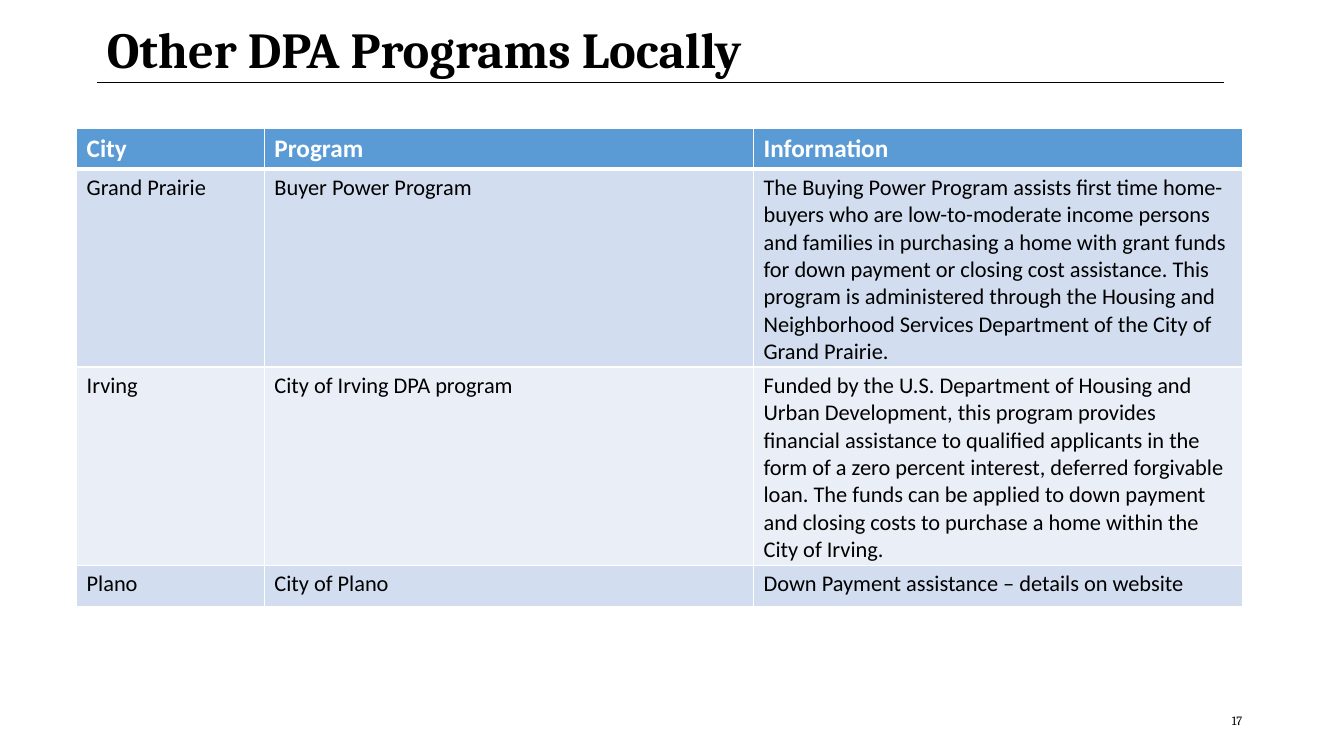
import dataclasses

import lxml.etree
import pptx
import pptx.dml.color
import pptx.enum.shapes
import pptx.enum.text
import pptx.oxml.ns
import pptx.util

Pt = pptx.util.Pt
Align = pptx.enum.text.PP_ALIGN
Anchor = pptx.enum.text.MSO_ANCHOR
qn = pptx.oxml.ns.qn


@dataclasses.dataclass(frozen=True)
class Theme:
    ink: str = "000000"
    paper: str = "FFFFFF"
    accent: str = "5B9BD5"
    bands: tuple = ("D2DEEF", "EAEFF7")
    serif: str = "Cambria"
    sans: str = "Calibri"
    title: int = 36
    head: int = 18
    body: int = 16
    small: int = 9


HEADS = ("City", "Program", "Information")
ROWS = (
    ("Grand Prairie", "Buyer Power Program",
     "The Buying Power Program assists first time home-buyers who are "
     "low-to-moderate income persons and families in purchasing a home with "
     "grant funds for down payment or closing cost assistance. This program "
     "is administered through the Housing and Neighborhood Services "
     "Department of the City of Grand Prairie."),
    ("Irving", "City of Irving DPA program",
     "Funded by the U.S. Department of Housing and Urban Development, this "
     "program provides financial assistance to qualified applicants in the "
     "form of a zero percent interest, deferred forgivable loan. The funds "
     "can be applied to down payment and closing costs to purchase a home "
     "within the City of Irving."),
    ("Plano", "City of Plano", "Down Payment assistance – details on website"),
)


def rgb(code):
    return pptx.dml.color.RGBColor.from_string(code)


def write(frame, text, *, font, size, color, bold=False, align=Align.LEFT,
          anchor=Anchor.TOP, space=None):
    frame.word_wrap = True
    frame.vertical_anchor = anchor
    frame.text = text
    para = frame.paragraphs[0]
    para.alignment = align
    para.line_spacing = space
    face = para.runs[0].font
    face.name, face.size, face.bold = font, Pt(size), bold
    face.color.rgb = rgb(color)


def edge(cell, side, color, width):
    """Draw one cell border; side is L, R, T or B. Call before filling."""
    line = lxml.etree.SubElement(cell._tc.get_or_add_tcPr(),
                                 qn(f"a:ln{side}"), w=str(Pt(width)))
    fill = lxml.etree.SubElement(line, qn("a:solidFill"))
    lxml.etree.SubElement(fill, qn("a:srgbClr"), val=color)


class Page:
    """Places elements by percent of the slide's width and height."""

    def __init__(self, deck, theme):
        self.deck, self.theme = deck, theme
        self.slide = deck.slides.add_slide(deck.slide_layouts[5])
        self.shapes = self.slide.shapes

    def across(self, share):
        return round(self.deck.slide_width * share / 100)

    def down(self, share):
        return round(self.deck.slide_height * share / 100)

    def box(self, left, top, width, height):
        return (self.across(left), self.down(top),
                self.across(width), self.down(height))

    def title(self, text, *area):
        shape = self.shapes.title
        shape.left, shape.top, shape.width, shape.height = self.box(*area)
        write(shape.text_frame, text, font=self.theme.serif,
              size=self.theme.title, color=self.theme.ink, bold=True, space=0.9)
        shape.text_frame.auto_size = pptx.enum.text.MSO_AUTO_SIZE.NONE

    def text(self, text, *area, **style):
        shape = self.shapes.add_textbox(*self.box(*area))
        write(shape.text_frame, text, **style)

    def rule(self, left, right, top):
        line = self.shapes.add_connector(
            pptx.enum.shapes.MSO_CONNECTOR.STRAIGHT, self.across(left),
            self.down(top), self.across(right), self.down(top))
        line.line.color.rgb = rgb(self.theme.ink)
        line.line.width = Pt(0.5)
        lxml.etree.SubElement(line._element.spPr, qn("a:effectLst"))

    def table(self, heads, rows, widths, least, *area):
        """Build a banded table; rows grow from the least height to fit."""
        look = self.theme
        grid = (heads, *rows)
        frame = self.shapes.add_table(len(grid), len(heads), *self.box(*area))
        table = frame.table
        table.horz_banding = False
        for col, width in zip(table.columns, widths):
            col.width = self.across(width)
        for r, row in enumerate(grid):
            table.rows[r].height = self.down(least)
            top = r == 0
            shade = look.accent if top else look.bands[(r - 1) % 2]
            for c, text in enumerate(row):
                cell = table.cell(r, c)
                for side in "LRTB":
                    thick = (top and side == "B") or (r == 1 and side == "T")
                    edge(cell, side, look.paper, 3 if thick else 1)
                cell.fill.solid()
                cell.fill.fore_color.rgb = rgb(shade)
                write(cell.text_frame, text, font=look.sans, bold=top,
                      size=look.head if top else look.body,
                      color=look.paper if top else look.ink)
        frame.height = self.down(area[3])


def main():
    deck = pptx.Presentation()
    deck.slide_width = pptx.util.Inches(13.33)
    deck.slide_height = pptx.util.Inches(7.5)
    look = Theme()
    page = Page(deck, look)
    page.text("17", 70.67, 92.67, 22.5, 5.33, font=look.serif,
              size=look.small, color=look.ink, align=Align.RIGHT,
              anchor=Anchor.MIDDLE)
    page.rule(7.2, 91.07, 10.93)
    page.title("Other DPA Programs Locally", 7.2, 2.67, 88.22, 16.67)
    page.table(HEADS, ROWS, (13.97, 36.4, 36.4), 5.41,
               5.7, 16.93, 86.77, 63.2)
    deck.save("out.pptx")


if __name__ == "__main__":
    main()
